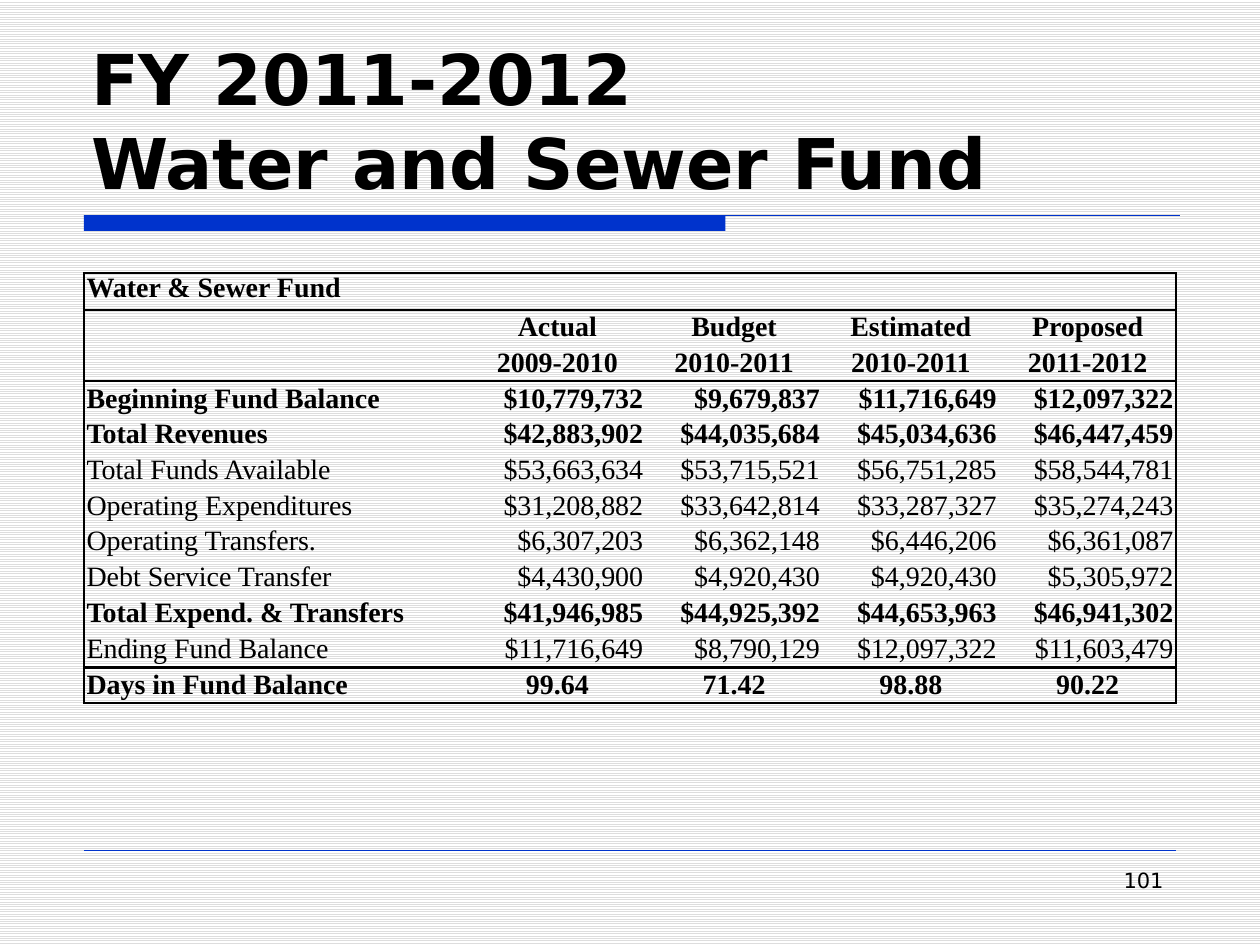
from lxml.etree import SubElement
from pptx import Presentation
from pptx.dml.color import RGBColor
from pptx.enum.dml import MSO_PATTERN
from pptx.enum.shapes import MSO_CONNECTOR, MSO_SHAPE
from pptx.enum.text import MSO_ANCHOR, PP_ALIGN
from pptx.oxml import parse_xml
from pptx.oxml.ns import nsdecls, qn
from pptx.util import Pt

BLACK = RGBColor(0, 0, 0)
WHITE = RGBColor(255, 255, 255)
GREY = RGBColor(0xDD, 0xDD, 0xDD)
BLUE = RGBColor(0, 0x33, 0xCC)
SANS = "DejaVu Sans"
SERIF = "Times New Roman"
LEFT, CENTER, RIGHT = PP_ALIGN.LEFT, PP_ALIGN.CENTER, PP_ALIGN.RIGHT

# Each row: bold, alignment of the figures, texts
ROWS = [
    (True, LEFT, ["Water & Sewer Fund", "", "", "", ""]),
    (True, CENTER, ["", "Actual", "Budget", "Estimated", "Proposed"]),
    (True, CENTER, ["", "2009-2010", "2010-2011", "2010-2011", "2011-2012"]),
    (True, RIGHT, ["Beginning Fund Balance", "$10,779,732", "$9,679,837",
                   "$11,716,649", "$12,097,322"]),
    (True, RIGHT, ["Total Revenues", "$42,883,902", "$44,035,684",
                   "$45,034,636", "$46,447,459"]),
    (False, RIGHT, ["Total Funds Available", "$53,663,634", "$53,715,521",
                    "$56,751,285", "$58,544,781"]),
    (False, RIGHT, ["Operating Expenditures", "$31,208,882", "$33,642,814",
                    "$33,287,327", "$35,274,243"]),
    (False, RIGHT, ["Operating Transfers.", "$6,307,203", "$6,362,148",
                    "$6,446,206", "$6,361,087"]),
    (False, RIGHT, ["Debt Service Transfer", "$4,430,900", "$4,920,430",
                    "$4,920,430", "$5,305,972"]),
    (True, RIGHT, ["Total Expend. & Transfers", "$41,946,985", "$44,925,392",
                   "$44,653,963", "$46,941,302"]),
    (False, RIGHT, ["Ending Fund Balance", "$11,716,649", "$8,790,129",
                    "$12,097,322", "$11,603,479"]),
    (True, CENTER, ["Days in Fund Balance", "99.64", "71.42", "98.88", "90.22"]),
]
TALL = (0, 10)  # rows a little higher than the rest
RULES = {0: 1, 1: 1.5, 3: 1, 11: 1.5, 12: 1}  # line width above each row
SIDES = {0: 1, 5: 1}  # line width left of each column


def style(para, face, size, bold=False, align=LEFT):
    para.alignment = align
    font = para.font
    font.name, font.size, font.bold = face, Pt(size), bold
    font.color.rgb = BLACK


def add_text(slide, text, x, y, w, h, size, bold=False, align=LEFT,
             anchor=MSO_ANCHOR.TOP):
    frame = slide.shapes.add_textbox(Pt(x), Pt(y), Pt(w), Pt(h)).text_frame
    frame.word_wrap = True
    frame.vertical_anchor = anchor
    para = frame.paragraphs[0]
    para.text = text
    style(para, SANS, size, bold, align)


def add_rule(slide, x, y, end, width):
    line = slide.shapes.add_connector(
        MSO_CONNECTOR.STRAIGHT, Pt(x), Pt(y), Pt(end), Pt(y))
    line.line.color.rgb = BLUE
    line.line.width = Pt(width)
    SubElement(line._element.spPr, qn("a:effectLst"))


def add_bar(slide, x, y, w, h):
    bar = slide.shapes.add_shape(
        MSO_SHAPE.RECTANGLE, Pt(x), Pt(y), Pt(w), Pt(h))
    bar.shadow.inherit = False
    bar.fill.solid()
    bar.fill.fore_color.rgb = BLUE
    bar.line.fill.background()


def set_edges(cell, widths):
    # Border elements come before the fill, in the order L, R, T, B
    props = cell._tc.get_or_add_tcPr()
    for spot, (side, width) in enumerate(zip("LRTB", widths)):
        ink = (f'<a:solidFill><a:srgbClr val="{BLACK}"/></a:solidFill>'
               if width else "<a:noFill/>")
        props.insert(spot, parse_xml(
            f'<a:ln{side} {nsdecls("a")} w="{Pt(width)}">{ink}</a:ln{side}>'))


def add_grid(slide, x, y, w, h):
    table = slide.shapes.add_table(
        len(ROWS), 5, Pt(x), Pt(y), Pt(w), Pt(h)).table
    table.first_row = table.horz_banding = False
    for c, col in enumerate(table.columns):
        col.width = Pt(101 if c else 220)
    for r, (bold, align, texts) in enumerate(ROWS):
        table.rows[r].height = Pt(21 if r in TALL else 20.4)
        for c, text in enumerate(texts):
            cell = table.cell(r, c)
            cell.margin_left = cell.margin_right = Pt(1.5)
            cell.margin_top = cell.margin_bottom = 0
            cell.vertical_anchor = MSO_ANCHOR.MIDDLE if r else MSO_ANCHOR.TOP
            cell.fill.background()
            set_edges(cell, (SIDES.get(c, 0), SIDES.get(c + 1, 0),
                             RULES.get(r, 0), RULES.get(r + 1, 0)))
            cell.text = text
            style(cell.text_frame.paragraphs[0], SERIF, 16, bold,
                  align if c else LEFT)


def main():
    deck = Presentation()
    deck.slide_width, deck.slide_height = Pt(720), Pt(540)
    slide = deck.slides.add_slide(deck.slide_layouts[6])

    # Striped background
    fill = slide.background.fill
    fill.patterned()
    fill.pattern = MSO_PATTERN.LIGHT_HORIZONTAL
    fill.fore_color.rgb = GREY
    fill.back_color.rgb = WHITE

    # Bar and rules
    add_bar(slide, 48, 123, 366.5, 9)
    add_rule(slide, 48, 123, 674.5, 0.75)
    add_rule(slide, 48, 486, 672, 0.25)

    # Title, table and page number
    add_text(slide, "FY 2011-2012\vWater and Sewer Fund", 45, 24, 630, 96,
             40, True, anchor=MSO_ANCHOR.BOTTOM)
    add_grid(slide, 48, 156, 624, 246)
    add_text(slide, "101", 516, 492, 156, 37.5, 12, align=RIGHT)

    deck.save("out.pptx")


if __name__ == "__main__":
    main()
